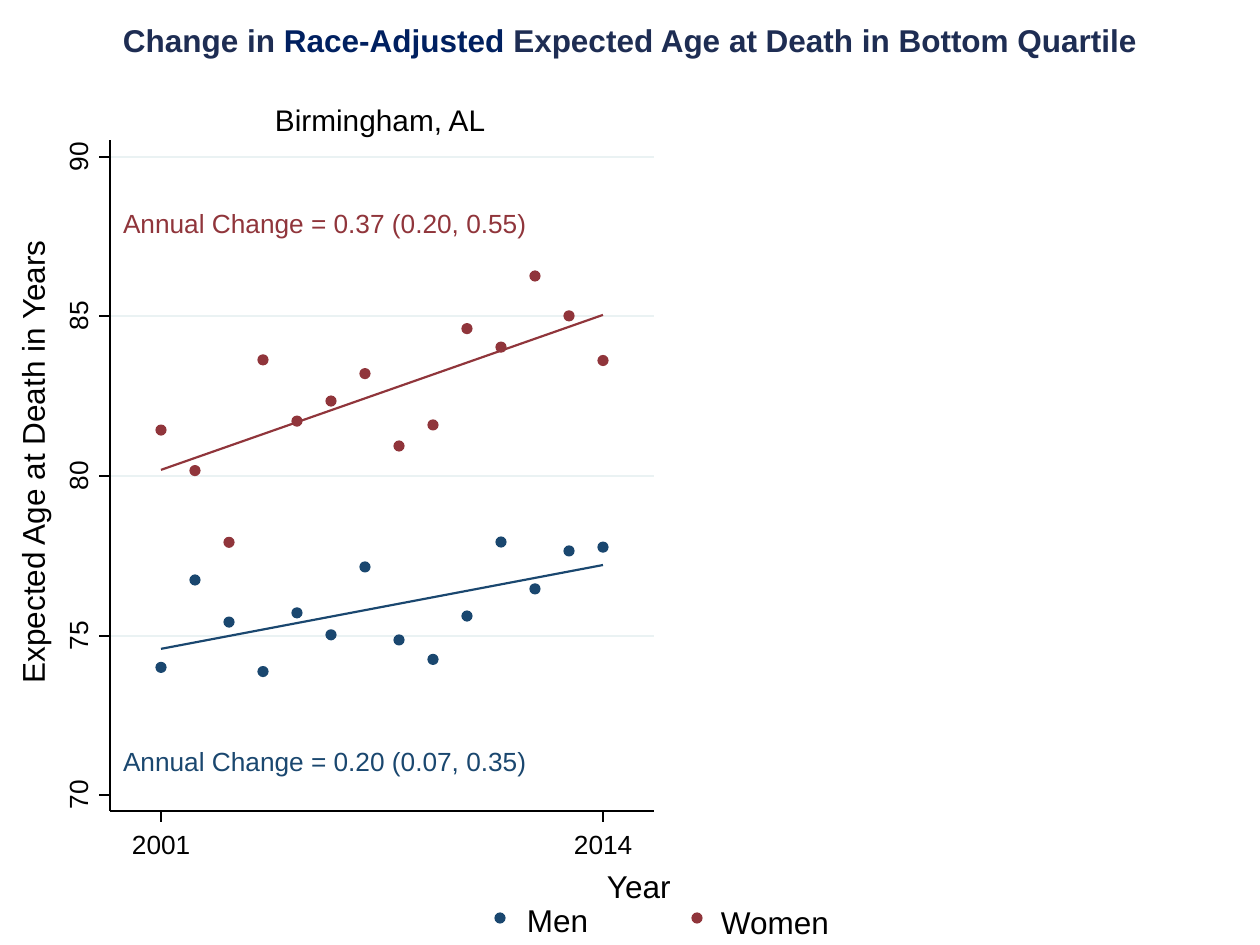
from pptx import Presentation
from pptx.dml.color import RGBColor
from pptx.enum.shapes import MSO_CONNECTOR, MSO_SHAPE
from pptx.enum.text import MSO_AUTO_SIZE as AUTO_SIZE, PP_ALIGN as ALIGN
from pptx.oxml.ns import qn
from pptx.util import Emu, Pt
from lxml.etree import SubElement

SCALE = 914400 / 126  # EMU per px

WHITE = RGBColor(0xFF, 0xFF, 0xFF)
BLACK = RGBColor(0x00, 0x00, 0x00)
GRID = RGBColor(0xEA, 0xF2, 0xF3)
NAVY = RGBColor(0x1A, 0x47, 0x6F)
MAROON = RGBColor(0x90, 0x35, 0x3B)
TITLE = RGBColor(0x1E, 0x2D, 0x53)
ACCENT = RGBColor(0x00, 0x20, 0x60)

# Plot area and axis scales, in px
LEFT, TOP, RIGHT, BOTTOM = 110, 140, 654, 811
FIRST_YEAR, LAST_YEAR, FIRST_X, YEAR_STEP = 2001, 2014, 161, 34
TOP_AGE, TOP_AGE_Y, AGE_STEP = 90, 157, 31.9
TICK = 11
DOT = 9

MEN = [74.0, 76.74, 75.42, 73.87, 75.71, 75.02, 77.15,
       74.86, 74.25, 75.61, 77.93, 76.46, 77.65, 77.77]
WOMEN = [81.44, 80.17, 77.92, 83.64, 81.72, 82.35, 83.21,
         80.94, 81.6, 84.62, 84.04, 86.27, 85.02, 83.62]
# Colour, yearly ages, trend ends
SERIES = [(NAVY, MEN, (74.58, 77.21)), (MAROON, WOMEN, (80.19, 85.05))]

deck = Presentation()
deck.slide_width, deck.slide_height = Emu(9144000), Emu(6858000)
page = deck.slides.add_slide(deck.slide_layouts[6])


def px(*lengths):
    return [Emu(round(length * SCALE)) for length in lengths]


def add_text(place, runs, size, angle=0, align=None, bold=None):
    box = page.shapes.add_textbox(*px(*place))
    box.rotation = angle
    frame = box.text_frame
    frame.margin_left = frame.margin_right = 0
    frame.margin_top = frame.margin_bottom = 0
    frame.word_wrap = align is not None
    frame.auto_size = AUTO_SIZE.SHAPE_TO_FIT_TEXT
    para = frame.paragraphs[0]
    para.alignment = align
    for words, color in runs:
        span = para.add_run()
        span.text = words
        span.font.name = "Arial"
        span.font.size = Pt(size)
        span.font.bold = bold
        span.font.color.rgb = color


# Axis positions
age_ticks = [(age, round(TOP_AGE_Y + (TOP_AGE - age) * AGE_STEP))
             for age in range(70, 91, 5)]
year_ticks = [(year, FIRST_X + (year - FIRST_YEAR) * YEAR_STEP)
              for year in (FIRST_YEAR, LAST_YEAR)]

# Plot background
plot = page.shapes.add_shape(
    MSO_SHAPE.RECTANGLE, *px(LEFT, TOP, RIGHT - LEFT, BOTTOM - TOP))
plot.shadow.inherit = False
plot.fill.solid()
plot.fill.fore_color.rgb = WHITE
plot.line.color.rgb = WHITE
plot.line.width = Pt(0.88)

# Gridlines, axes and ticks
lines = [(LEFT, y, RIGHT, y, GRID, 1.25) for age, y in age_ticks if age > 70]
lines += [(LEFT, BOTTOM, LEFT, TOP, BLACK, 0.88),
          (LEFT, BOTTOM, RIGHT, BOTTOM, BLACK, 0.88)]
lines += [(LEFT, y, LEFT - TICK, y, BLACK, 0.88) for age, y in age_ticks]
lines += [(x, BOTTOM, x, BOTTOM + TICK, BLACK, 0.88) for year, x in year_ticks]
for x1, y1, x2, y2, color, width in lines:
    line = page.shapes.add_connector(
        MSO_CONNECTOR.STRAIGHT, *px(x1, y1, x2, y2))
    line.line.color.rgb = color
    line.line.width = Pt(width)
    SubElement(line._element.spPr, qn("a:effectLst"))

# Data points and legend markers
dots = [(FIRST_X + i * YEAR_STEP, TOP_AGE_Y + (TOP_AGE - age) * AGE_STEP, color)
        for color, ages, trend in SERIES for i, age in enumerate(ages)]
dots += [(500, 918, NAVY), (697, 918, MAROON)]
for x, y, color in dots:
    dot = page.shapes.add_shape(
        MSO_SHAPE.OVAL, *px(x - DOT / 2, y - DOT / 2, DOT, DOT))
    dot.shadow.inherit = False
    dot.fill.solid()
    dot.fill.fore_color.rgb = color
    dot.line.color.rgb = color
    dot.line.width = Pt(1.25)

# Trend lines
for color, ages, (start, end) in SERIES:
    points = [px(FIRST_X + part * (LAST_YEAR - FIRST_YEAR) * YEAR_STEP,
                 TOP_AGE_Y + (TOP_AGE - start - part * (end - start)) * AGE_STEP)
              for part in (0, 0.5, 1)]
    builder = page.shapes.build_freeform(*points[0])
    builder.add_line_segments(points[1:], close=False)
    trend = builder.convert_to_shape()
    trend.shadow.inherit = False
    trend.fill.background()
    trend.line.color.rgb = color
    trend.line.width = Pt(1.25)

# Tick labels
for age, y in age_ticks:
    add_text((59, y - 27, 44, 38), [(str(age), BLACK)], 15, angle=270)
for year, x in year_ticks:
    add_text((x - 29, 828, 77, 38), [(str(year), BLACK)], 15)

# Annotations, headings and legend names
labels = [
    ((123, 745, 447, 38), "Annual Change = 0.20 (0.07, 0.35)", NAVY, 15, 0),
    ((123, 207, 447, 38), "Annual Change = 0.37 (0.20, 0.55)", MAROON, 15, 0),
    ((275, 102, 228, 40), "Birmingham, AL", BLACK, 17, 0),
    ((-208, 417, 488, 45), "Expected Age at Death in Years", BLACK, 18, 270),
    ((607, 867, 84, 45), "Year", BLACK, 18, 0),
    ((527, 901, 62, 38), "Men", BLACK, 18, 0),
    ((721, 903, 108, 38), "Women", BLACK, 18, 0),
]
for place, words, color, size, angle in labels:
    add_text(place, [(words, color)], size, angle)

# Slide title
add_text((0, 21, 1260, 38),
         [("Change in ", TITLE), ("Race-Adjusted ", ACCENT),
          ("Expected Age at Death in Bottom Quartile", TITLE)],
         18, align=ALIGN.CENTER, bold=True)

deck.save("out.pptx")
